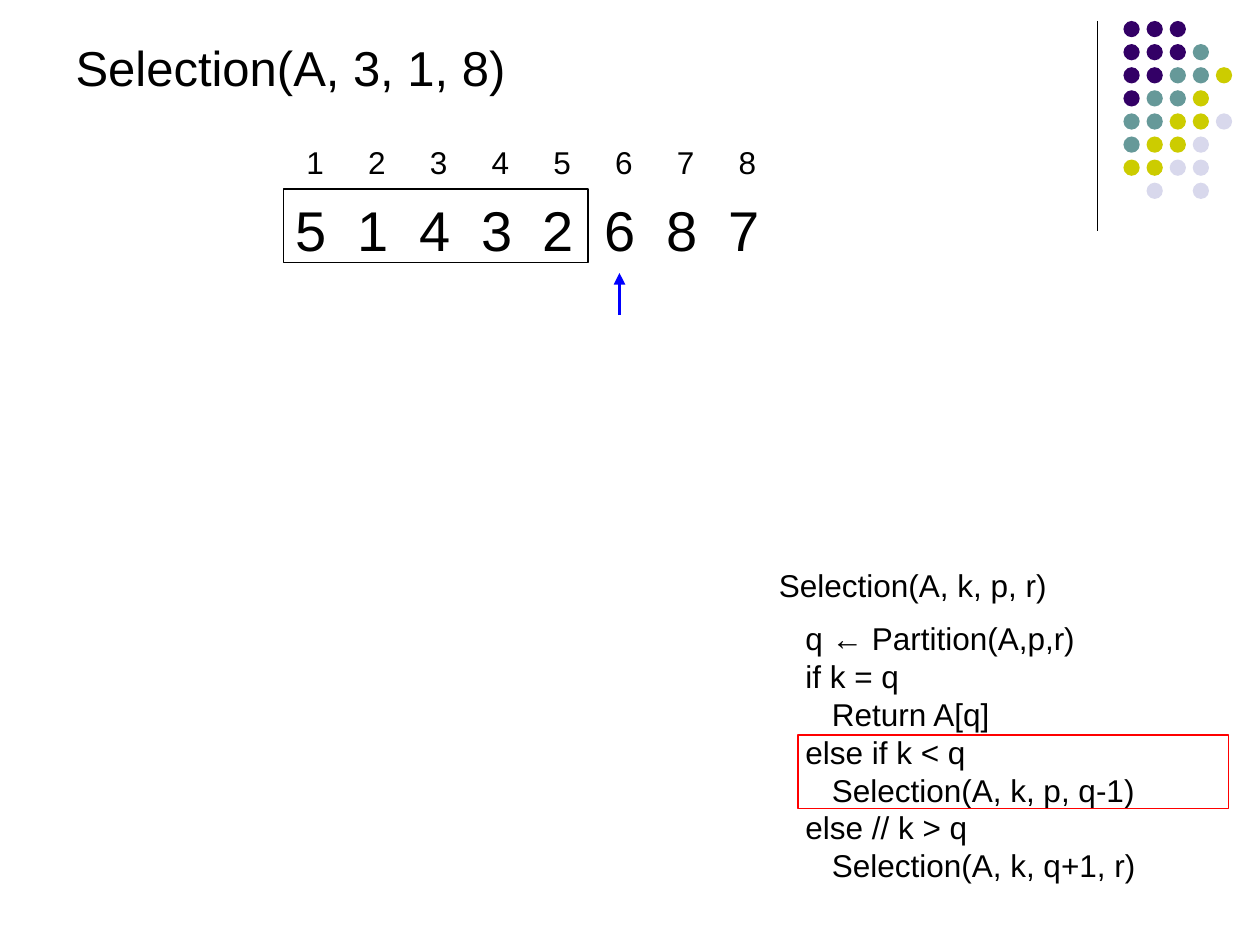
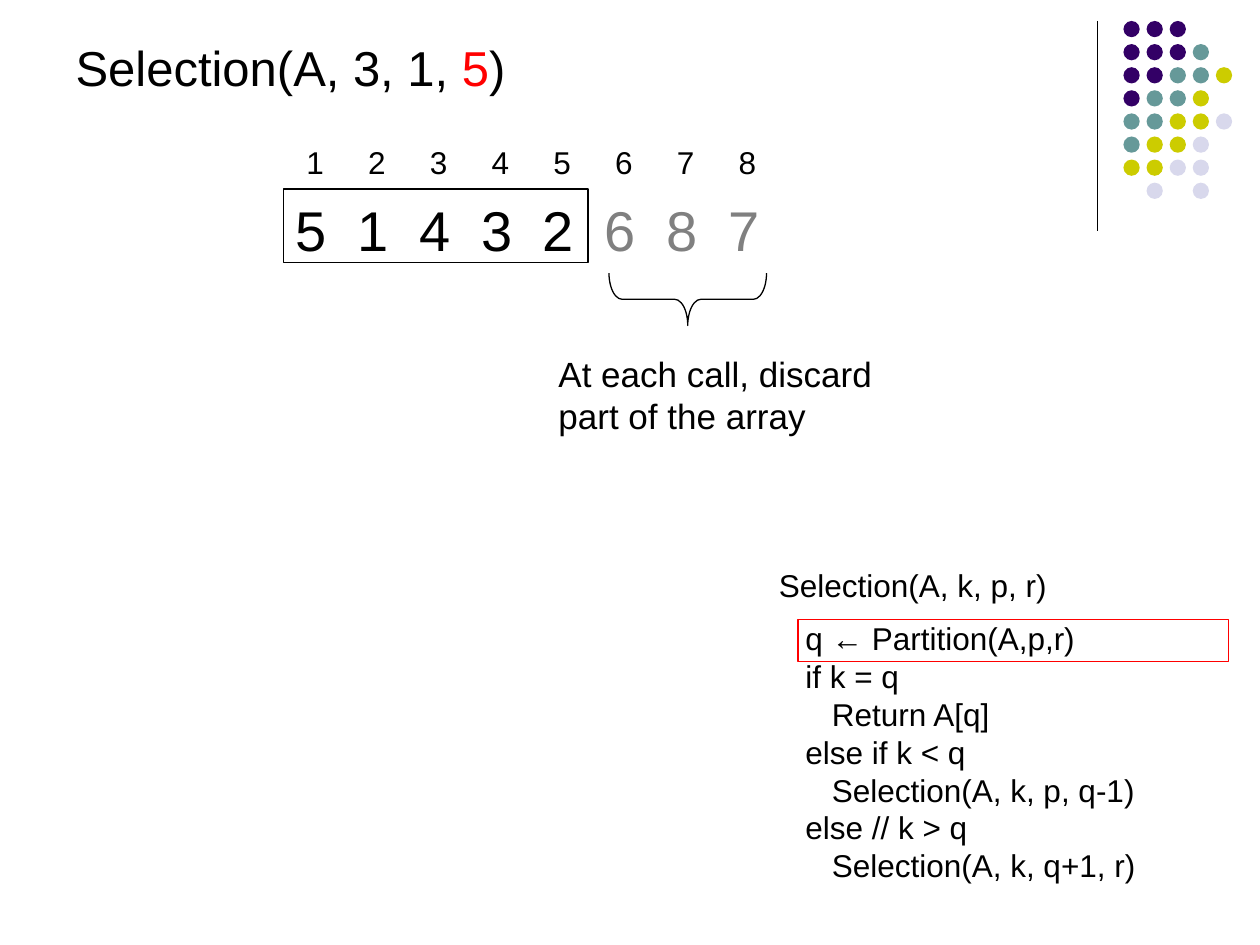
from lxml import etree
from pptx import Presentation
from pptx.dml.color import RGBColor
from pptx.enum.shapes import MSO_CONNECTOR, MSO_SHAPE
from pptx.enum.text import MSO_ANCHOR, MSO_AUTO_SIZE, PP_ALIGN
from pptx.oxml.ns import qn
from pptx.util import Inches, Pt

BLACK = RGBColor(0x00, 0x00, 0x00)
GRAY = RGBColor(0x80, 0x80, 0x80)
RED = RGBColor(0xFF, 0x00, 0x00)
BLUE = RGBColor(0x00, 0x00, 0xFF)
DOT_COLORS = {
    "P": RGBColor(0x33, 0x00, 0x66),
    "T": RGBColor(0x66, 0x99, 0x99),
    "Y": RGBColor(0xCC, 0xCC, 0x00),
    "L": RGBColor(0xD8, 0xD8, 0xEC),
}
DOT_ROWS = ["PPP", "PPPT", "PPTTY", "PTTY", "TTYYL", "TYYL", "YYLL", ".L.L"]

INDICES = "1\t2\t3\t4\t5\t6\t7\t8"
CELL_PITCH = Inches(0.49)
CODE_INDENT = Inches(0.21)
CODE = [
    (0, "Selection(A, k, p, r)"),
    (1, "q ← Partition(A,p,r)"),
    (1, "if k = q"),
    (2, "Return A[q]"),
    (1, "else if k < q"),
    (2, "Selection(A, k, p, q-1)"),
    (1, "else // k > q"),
    (2, "Selection(A, k, q+1, r)"),
]

# Each slide: title runs, array runs, top and height of the highlighted code
SLIDES = [
    ([("Selection(A, 3, 1, 8)", BLACK)],
     [("5\t1\t4\t3\t2\t6\t8\t7", BLACK)], 70, 7),
    ([("Selection(A, 3, 1, ", BLACK), ("5", RED), (")", BLACK)],
     [("5\t1\t4\t3\t2\t", BLACK), ("6\t8\t7", GRAY)], 59, 4),
]

prs = Presentation()
prs.slide_width, prs.slide_height = Inches(10), Inches(7.5)
UNIT = prs.slide_width / 120  # the slide is a grid of 120 columns and 90 rows


def grid(*cells):
    return [round(cell * UNIT) for cell in cells]


def write(p, runs, size):
    """Fill a paragraph with coloured runs, with tab stops one array cell apart."""
    p.font.name, p.font.size = "Arial", Pt(size)
    p.alignment = PP_ALIGN.LEFT
    for text, color in runs:
        r = p.add_run()
        r.text = text
        r.font.color.rgb = color
    if "\t" in runs[0][0]:
        tabs = etree.Element(qn("a:tabLst"))
        for i in range(1, 8):
            etree.SubElement(tabs, qn("a:tab"), pos=str(CELL_PITCH * i), algn="l")
        p._p.get_or_add_pPr().insert(0, tabs)


layout = prs.slide_layouts[5]

for number, (title, array, mark_top, mark_height) in enumerate(SLIDES, 1):
    slide = prs.slides.add_slide(layout)
    shapes = slide.shapes

    if number == 1:  # the rule and the dots move to the layout, for every slide
        rule = shapes.add_connector(MSO_CONNECTOR.STRAIGHT, *grid(104.5, 2, 104.5, 22))
        rule.line.color.rgb, rule.line.width = BLACK, Pt(0.75)
        etree.SubElement(rule.element.spPr, qn("a:effectLst"))
        layout.shapes.element.append(rule.element)
        for row, codes in enumerate(DOT_ROWS):
            for col, code in enumerate(codes):
                if code in DOT_COLORS:
                    dot = shapes.add_shape(
                        MSO_SHAPE.OVAL,
                        *grid(107 + 2.2 * col, 2 + 2.2 * row, 1.55, 1.55))
                    dot.shadow.inherit = False
                    dot.fill.solid()
                    dot.fill.fore_color.rgb = DOT_COLORS[code]
                    dot.line.fill.background()
                    layout.shapes.element.append(dot.element)

    heading = shapes.title
    heading.left, heading.top, heading.width, heading.height = grid(6, 3, 77, 6.8)
    tf = heading.text_frame
    tf.auto_size, tf.vertical_anchor = MSO_AUTO_SIZE.NONE, MSO_ANCHOR.TOP
    write(tf.paragraphs[0], title, 28)

    texts = [
        ((28, 13, 50, 4.8), [(INDICES, BLACK)], 18),
        ((27, 18, 55, 7.6), array, 32),
    ]
    if number == 2:
        note = [("At each call, discard part of the array", BLACK)]
        texts.append(((52, 33, 33, 9.2), note, 20))
    for place, runs, size in texts:
        tf = shapes.add_textbox(*grid(*place)).text_frame
        tf.word_wrap = True
        write(tf.paragraphs[0], runs, size)

    tf = shapes.add_textbox(*grid(73, 53.3, 45, 32.2)).text_frame
    tf.word_wrap = True
    for i, (level, line) in enumerate(CODE):
        p = tf.add_paragraph() if i else tf.paragraphs[0]
        write(p, [(line, BLACK)], 18)
        p._p.get_or_add_pPr().set("marL", str(CODE_INDENT * level))
        if i == 1:
            p.space_before = Pt(9)

    outlines = [
        (MSO_SHAPE.RECTANGLE, (27, 18, 29, 7), BLACK),
        (MSO_SHAPE.RECTANGLE, (76, mark_top, 41, mark_height), RED),
    ]
    if number == 2:
        outlines.append((MSO_SHAPE.LEFT_BRACE, (63, 21, 5, 15), BLACK))
    for kind, place, color in outlines:
        sp = shapes.add_shape(kind, *grid(*place))
        sp.shadow.inherit = False
        sp.fill.background()
        sp.line.color.rgb, sp.line.width = color, Pt(0.75)
        if kind == MSO_SHAPE.LEFT_BRACE:
            sp.rotation = 270
            sp.adjustments[0] = 0.25

    if number == 1:
        pivot = shapes.add_connector(MSO_CONNECTOR.STRAIGHT, *grid(59, 30, 59, 26))
        pivot.line.color.rgb, pivot.line.width = BLUE, Pt(2.25)
        etree.SubElement(pivot.line._get_or_add_ln(), qn("a:tailEnd"), type="triangle")
        etree.SubElement(pivot.element.spPr, qn("a:effectLst"))

prs.save("out.pptx")
